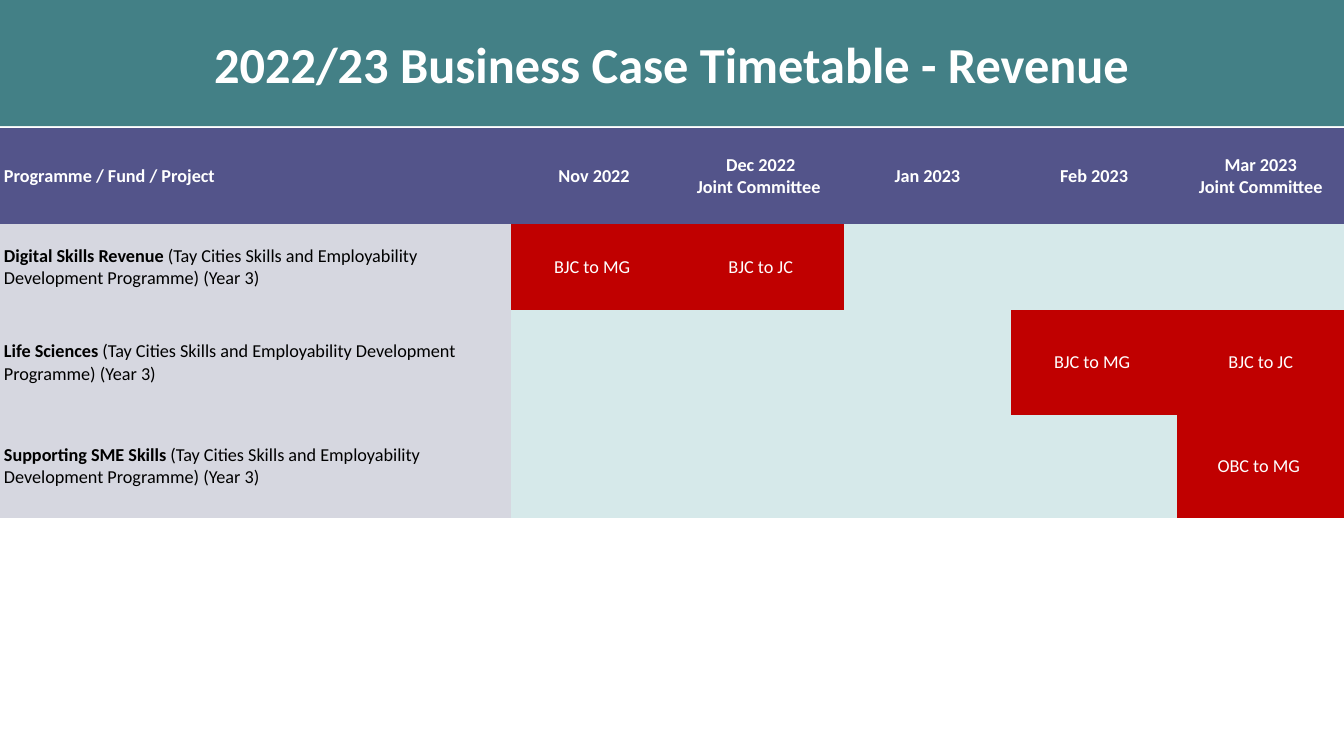
import pptx
import pptx.util
import pptx.dml.color
import pptx.enum.shapes
import pptx.enum.text

Cm = pptx.util.Cm
Pt = pptx.util.Pt
ALIGN = pptx.enum.text.PP_ALIGN
MIDDLE = pptx.enum.text.MSO_ANCHOR.MIDDLE

COLORS = {
    "banner": "438086",
    "header": "53548A",
    "project": "D6D7E0",
    "idle": "D6E9EA",
    "stage": "C00000",
    "light": "FFFFFF",
    "dark": "000000",
}
FONT = "Calibri"
NO_STYLE = "{2D5ABB26-0587-4C30-8999-92F81FD0307C}"
WIDTH, HEIGHT = 33.87, 19.05
PROJECT_WIDTH = 12.87
ROW_HEIGHTS = [2.41, 2.18, 2.64, 2.59]
MONTHS = [
    ["Nov 2022"],
    ["Dec 2022", "Joint Committee "],
    ["Jan 2023"],
    ["Feb 2023"],
    ["Mar 2023", "Joint Committee"],
]
PROGRAMME = " (Tay Cities Skills and Employability Development Programme) (Year 3)"
PROJECTS = [
    ("Digital Skills Revenue", {1: "BJC to MG ", 2: "BJC to JC"}),
    ("Life Sciences", {4: "BJC to MG ", 5: "BJC to JC"}),
    ("Supporting SME Skills", {5: "OBC to MG "}),
]


def rgb(name):
    return pptx.dml.color.RGBColor.from_string(COLORS[name])


def paint(target, color):
    target.fill.solid()
    target.fill.fore_color.rgb = rgb(color)


def style(p, size, color, bold=None, align=ALIGN.LEFT):
    p.alignment = align
    p.font.name = FONT
    p.font.size = Pt(size)
    p.font.bold = bold
    p.font.color.rgb = rgb(color)


def fill_cell(cell, fill, lines=(), color="light", bold=False, align=ALIGN.CENTER):
    paint(cell, fill)
    cell.vertical_anchor = MIDDLE
    cell.margin_left = cell.margin_right = Cm(0.1)
    cell.margin_top = cell.margin_bottom = Cm(0.05)
    tf = cell.text_frame
    for i, line in enumerate(lines):
        p = tf.paragraphs[0] if i == 0 else tf.add_paragraph()
        p.add_run().text = line
        style(p, 13, color, bold, align)


def add_banner(slide, left, top, width, height):
    sp = slide.shapes.add_shape(
        pptx.enum.shapes.MSO_SHAPE.RECTANGLE, Cm(left), Cm(top), Cm(width), Cm(height)
    )
    sp.shadow.inherit = False
    paint(sp, "banner")
    sp.line.fill.background()
    tf = sp.text_frame
    tf.word_wrap = True
    tf.vertical_anchor = MIDDLE
    p = tf.paragraphs[0]
    p.add_run().text = "2022/23 Business Case Timetable - Revenue"
    style(p, 36, "light", True, ALIGN.CENTER)


def add_timetable(slide, left, top, width, height):
    frame = slide.shapes.add_table(
        len(PROJECTS) + 1, len(MONTHS) + 1, Cm(left), Cm(top), Cm(width), Cm(height)
    )
    table = frame.table
    table.horz_banding = False
    table._tbl.tblPr.find(pptx.oxml.ns.qn("a:tableStyleId")).text = NO_STYLE
    month_width = (width - PROJECT_WIDTH) / len(MONTHS)
    for i, col in enumerate(table.columns):
        col.width = Cm(month_width if i else PROJECT_WIDTH)
    for row, row_height in zip(table.rows, ROW_HEIGHTS):
        row.height = Cm(row_height)

    fill_cell(table.cell(0, 0), "header", ["Programme / Fund / Project"],
              bold=True, align=ALIGN.LEFT)
    for c, lines in enumerate(MONTHS, 1):
        fill_cell(table.cell(0, c), "header", lines, bold=True)

    for r, (project, stages) in enumerate(PROJECTS, 1):
        cell = table.cell(r, 0)
        fill_cell(cell, "project", [project], "dark", None, ALIGN.LEFT)
        p = cell.text_frame.paragraphs[0]
        p.runs[0].font.bold = True
        p.add_run().text = PROGRAMME
        for c in range(1, len(MONTHS) + 1):
            if c in stages:
                fill_cell(table.cell(r, c), "stage", [stages[c]])
            else:
                fill_cell(table.cell(r, c), "idle")


def main():
    prs = pptx.Presentation()
    prs.slide_width = Cm(WIDTH)
    prs.slide_height = Cm(HEIGHT)
    slide = prs.slides.add_slide(prs.slide_layouts[6])
    add_banner(slide, 0, 0, WIDTH, 3.18)
    add_timetable(slide, 0, 3.23, WIDTH, sum(ROW_HEIGHTS))
    prs.save("out.pptx")


if __name__ == "__main__":
    main()
